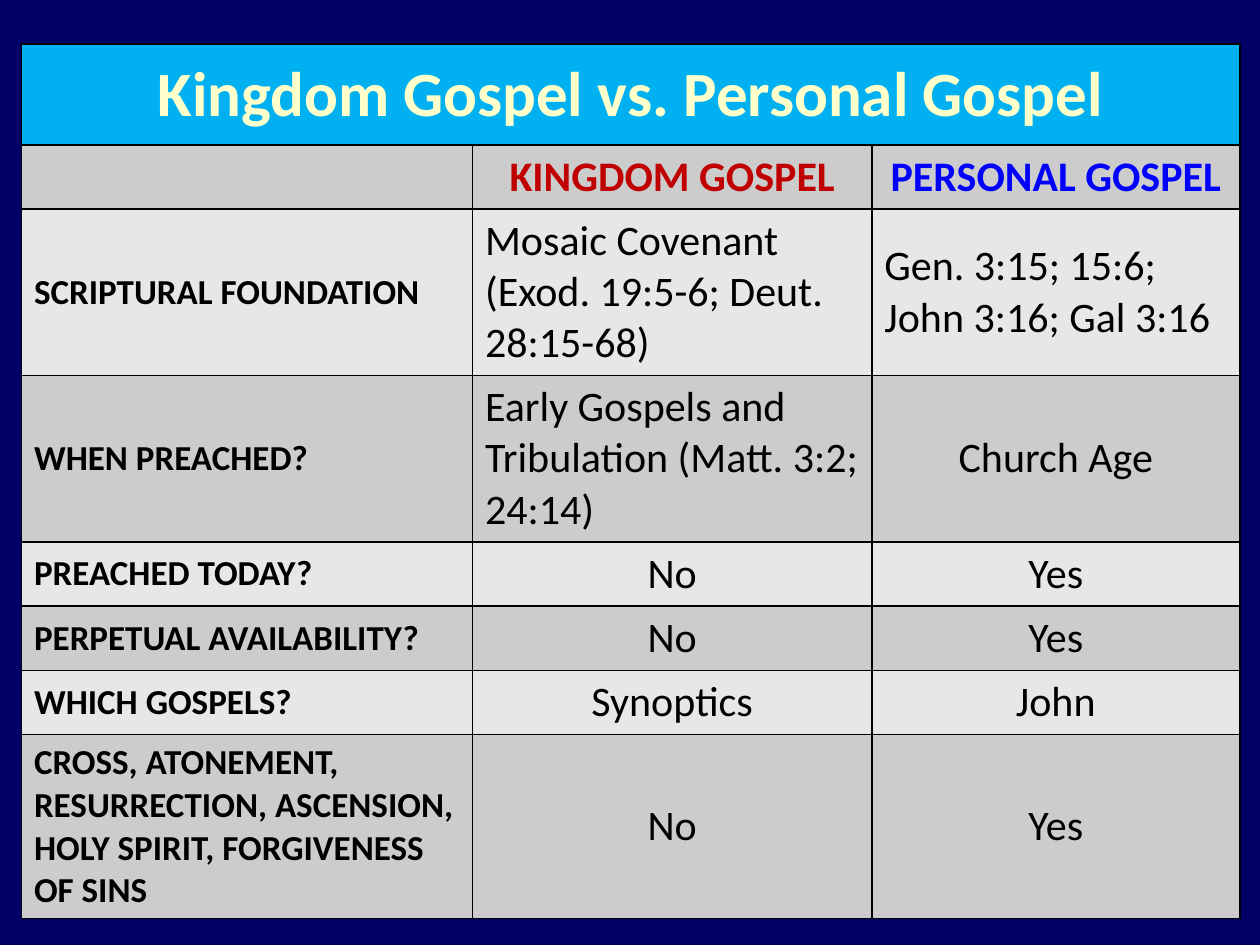
import pptx
import pptx.dml.color
import pptx.enum.text
import pptx.oxml
import pptx.oxml.ns
import pptx.util
from pptx.util import Inches

ALIGN = pptx.enum.text.PP_ALIGN
FONT = "Calibri"
BANDS = ("CCCCCC", "E7E7E7")
COLUMN_WIDTHS = (3.58, 3.17, 2.92)
ROW_HEIGHTS = (0.8, 0.51, 1.32, 1.32, 0.51, 0.51, 0.51, 1.46)

TITLE = "Kingdom Gospel vs. Personal Gospel"
HEADINGS = (("KINGDOM GOSPEL", "C00000"), ("PERSONAL GOSPEL", "0000FF"))

# Question, kingdom gospel answer, personal gospel answer
COMPARISONS = (
    ("SCRIPTURAL FOUNDATION",
     "Mosaic Covenant\n(Exod. 19:5-6; Deut. 28:15-68)",
     "Gen. 3:15; 15:6; John 3:16; Gal 3:16"),
    ("WHEN PREACHED?",
     "Early Gospels and Tribulation (Matt. 3:2; 24:14)", "Church Age"),
    ("PREACHED TODAY?", "No", "Yes"),
    ("PERPETUAL AVAILABILITY?", "No", "Yes"),
    ("WHICH GOSPELS?", "Synoptics", "John"),
    ("CROSS, ATONEMENT, RESURRECTION, ASCENSION, HOLY SPIRIT, "
     "FORGIVENESS OF SINS", "No", "Yes"),
)
LONGEST_CENTRED_ANSWER = 12


def color(hex_value):
    return pptx.dml.color.RGBColor.from_string(hex_value)


def write_text(cell, text, size=24, bold=False, ink="000000", align=ALIGN.LEFT):
    cell.text_frame.text = text
    for paragraph in cell.text_frame.paragraphs:
        paragraph.alignment = align
        for run in paragraph.runs:
            run.font.name = FONT
            run.font.size = pptx.util.Pt(size)
            run.font.bold = bold
            run.font.color.rgb = color(ink)


def add_borders(cell, ink="000000", width=1):
    properties = cell._tc.get_or_add_tcPr()
    for position, side in enumerate(("lnL", "lnR", "lnT", "lnB")):
        border = pptx.oxml.parse_xml(
            f'<a:{side} {pptx.oxml.ns.nsdecls("a")} w="{pptx.util.Pt(width)}">'
            f'<a:solidFill><a:srgbClr val="{ink}"/></a:solidFill></a:{side}>')
        properties.insert(position, border)


def style_cell(cell, fill):
    cell.fill.solid()
    cell.fill.fore_color.rgb = color(fill)
    cell.vertical_anchor = pptx.enum.text.MSO_ANCHOR.MIDDLE
    add_borders(cell)


def add_comparison_table(slide):
    frame = slide.shapes.add_table(
        len(ROW_HEIGHTS), len(COLUMN_WIDTHS), Inches(0.17), Inches(0.35),
        Inches(sum(COLUMN_WIDTHS)), Inches(sum(ROW_HEIGHTS)))
    table = frame.table
    for column, width in zip(table.columns, COLUMN_WIDTHS):
        column.width = Inches(width)
    for index, (row, height) in enumerate(zip(table.rows, ROW_HEIGHTS)):
        row.height = Inches(height)
        fill = BANDS[(index - 1) % 2] if index else "00B0F0"
        for cell in row.cells:
            style_cell(cell, fill)
    return table


def fill_table(table):
    # Title across all columns
    title_cell = table.cell(0, 0)
    title_cell.merge(table.cell(0, len(COLUMN_WIDTHS) - 1))
    write_text(title_cell, TITLE, size=36, bold=True, ink="FFFFCC",
               align=ALIGN.CENTER)

    # Column headings
    for column, (heading, ink) in enumerate(HEADINGS, start=1):
        write_text(table.cell(1, column), heading, bold=True, ink=ink,
                   align=ALIGN.CENTER)

    # Questions and answers; short answers are centred
    for row, (question, *answers) in enumerate(COMPARISONS, start=2):
        write_text(table.cell(row, 0), question, size=20, bold=True)
        for column, answer in enumerate(answers, start=1):
            short = len(answer) <= LONGEST_CENTRED_ANSWER
            write_text(table.cell(row, column), answer,
                       align=ALIGN.CENTER if short else ALIGN.LEFT)


def main():
    presentation = pptx.Presentation()
    presentation.slide_width = Inches(10)
    presentation.slide_height = Inches(7.5)
    slide = presentation.slides.add_slide(presentation.slide_layouts[6])
    slide.background.fill.solid()
    slide.background.fill.fore_color.rgb = color("000066")
    fill_table(add_comparison_table(slide))
    presentation.save("out.pptx")


if __name__ == "__main__":
    main()
